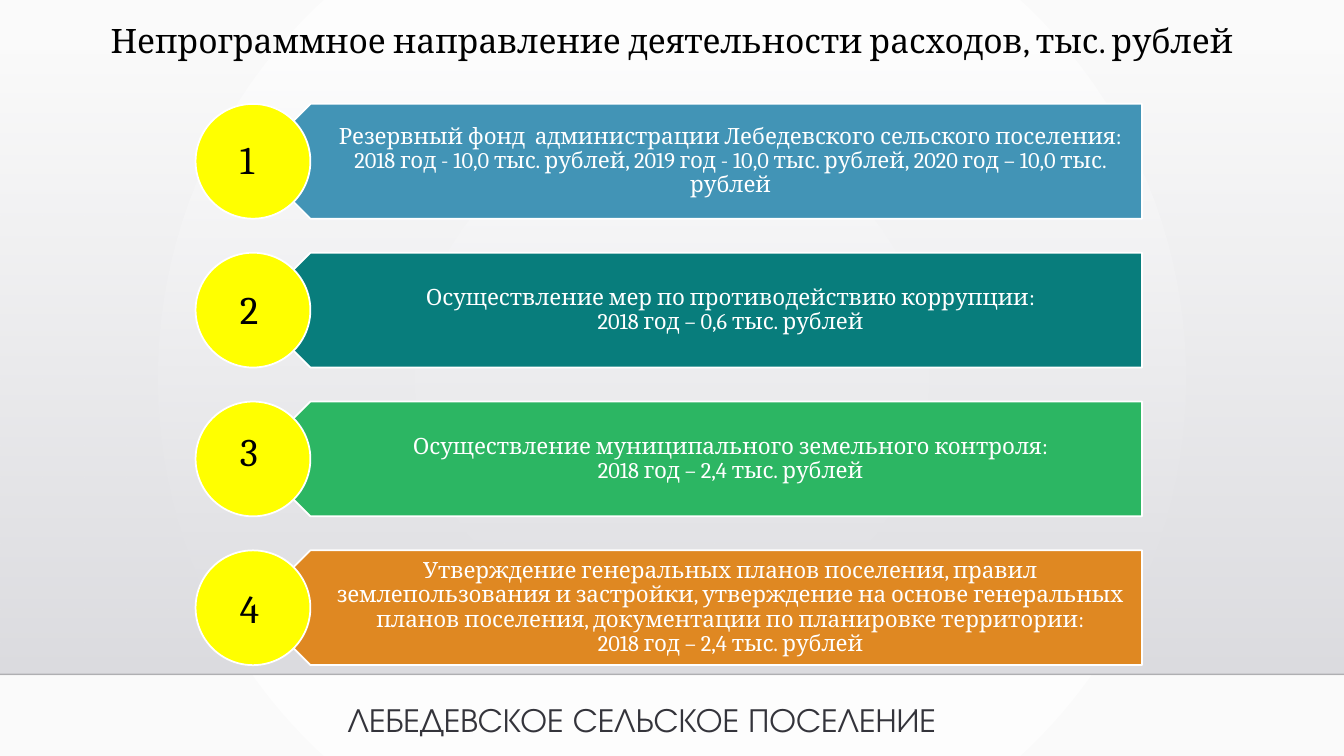
from lxml import etree
from pptx import Presentation
from pptx.dml.color import RGBColor
from pptx.enum.shapes import MSO_CONNECTOR, MSO_SHAPE
from pptx.enum.text import MSO_ANCHOR, MSO_AUTO_SIZE, PP_ALIGN
from pptx.oxml.ns import qn
from pptx.util import Pt

RECT, PLATE, OVAL = MSO_SHAPE.RECTANGLE, MSO_SHAPE.PENTAGON, MSO_SHAPE.OVAL
LINE = MSO_CONNECTOR.STRAIGHT
TOP, MIDDLE = MSO_ANCHOR.TOP, MSO_ANCHOR.MIDDLE
LEFT, CENTER = PP_ALIGN.LEFT, PP_ALIGN.CENTER
FIXED, GROW = MSO_AUTO_SIZE.NONE, MSO_AUTO_SIZE.SHAPE_TO_FIT_TEXT

WIDE, HIGH = 960, 540
FLOOR = 481.7
ROW_TOP, ROW_STEP, ROW_HIGH = 74.2, 106.3, 82
COLORS = {
    "white": "FFFFFF", "pale": "FAFAFA", "mist": "DCDCE0", "haze": "DEDEE2",
    "black": "000000", "rule": "000001", "ink": "34343B", "yellow": "FFFF00",
    "blue": "4294B6", "teal": "087D7C", "green": "2CB663", "orange": "DF8822",
}

# colour, top of the number, lines of text
ROWS = [
    ("blue", 92.9, ["Резервный фонд  администрации Лебедевского сельского поселения:",
                    "2018 год - 10,0 тыс. рублей, 2019 год - 10,0 тыс. рублей, "
                    "2020 год – 10,0 тыс. рублей"]),
    ("teal", 200.2, ["Осуществление мер по противодействию коррупции:",
                     "2018 год – 0,6 тыс. рублей"]),
    ("green", 301.7, ["Осуществление муниципального земельного контроля:",
                      "2018 год – 2,4 тыс. рублей"]),
    ("orange", 414, ["Утверждение генеральных планов поселения, правил землепользования "
                     "и застройки, утверждение на основе генеральных планов поселения, "
                     "документации по планировке территории:",
                     "2018 год – 2,4 тыс. рублей"]),
]


def rgb(name):
    return RGBColor.from_string(COLORS[name])


def fade(node, share):
    """Set the opacity, in percent, of the first RGB colour under node."""
    color = node.find(".//" + qn("a:srgbClr"))
    etree.SubElement(color, qn("a:alpha"), val=str(share * 1000))


def blend(fill, first, last):
    """Fill with a gradient that runs from top to bottom."""
    fill.gradient()
    fill.gradient_angle = 270
    for stop, name in zip(fill.gradient_stops, (first, last)):
        stop.color.rgb = rgb(name)


def write(frame, lines, size=16, font="Cambria", color="white", align=LEFT,
          space=None, anchor=TOP, wrap=True, fit=FIXED, inset=(7.2, 3.6, 7.2, 3.6)):
    frame.word_wrap, frame.auto_size, frame.vertical_anchor = wrap, fit, anchor
    (frame.margin_left, frame.margin_top,
     frame.margin_right, frame.margin_bottom) = map(Pt, inset)
    for i, line in enumerate(lines):
        para = frame.add_paragraph() if i else frame.paragraphs[0]
        para.alignment, para.line_spacing = align, space
        para.space_before = Pt(0)
        run = para.add_run()
        run.text = line
        run.font.size, run.font.name = Pt(size), font
        run.font.color.rgb = rgb(color)


class Board:
    """Draws the elements of one slide in a common style."""

    def __init__(self, slide):
        self.slide = slide
        self.shapes = slide.shapes

    def ground(self):
        """Give the slide a round gradient that spreads from its centre."""
        blend(self.slide.background.fill, "white", "pale")
        lin = self.slide.element.find(".//" + qn("a:lin"))
        ring = etree.Element(qn("a:path"), {"path": "circle"})
        etree.SubElement(ring, qn("a:fillToRect"), dict.fromkeys("ltrb", "50000"))
        lin.getparent().replace(lin, ring)

    def title(self, text, *box):
        title = self.shapes.title
        title.left, title.top, title.width, title.height = map(Pt, box)
        write(title.text_frame, [text], size=24, color="black", align=CENTER, space=0.9)

    def shape(self, kind, *box, fill=None, turn=0):
        shape = self.shapes.add_shape(kind, *map(Pt, box))
        shape.shadow.inherit = False
        shape.rotation = turn
        if fill:
            shape.fill.solid()
            shape.fill.fore_color.rgb = rgb(fill)
            shape.line.color.rgb = rgb("white")
            shape.line.width = Pt(1.25)
        else:
            shape.line.fill.background()
        return shape

    def veil(self, *box):
        """Add a panel that fades in towards its lower edge."""
        panel = self.shape(RECT, *box)
        blend(panel.fill, "mist", "haze")
        fade(panel.element.spPr, 0)

    def rule(self, *ends):
        line = self.shapes.add_connector(LINE, *map(Pt, ends))
        line.line.color.rgb = rgb("rule")
        line.line.width = Pt(1)
        props = line.element.spPr
        fade(props, 20)
        etree.SubElement(props, qn("a:effectLst"))

    def text(self, lines, *box, **style):
        write(self.shapes.add_textbox(*map(Pt, box)).text_frame, lines, **style)

    def row(self, top, fill, lines):
        self.shape(PLATE, 180.7, top, 635, ROW_HIGH, fill=fill, turn=180)
        self.text(lines, 201, top, 614.3, ROW_HIGH, align=CENTER, space=0.9,
                  anchor=MIDDLE, inset=(36, 5, 8.6, 5))
        self.shape(OVAL, 139.7, top, ROW_HIGH, ROW_HIGH, fill="yellow")


def main():
    deck = Presentation()
    deck.slide_width, deck.slide_height = Pt(WIDE), Pt(HIGH)
    board = Board(deck.slides.add_slide(deck.slide_layouts[5]))
    board.ground()
    board.veil(0, 36.7, WIDE, FLOOR - 36.7)
    board.rule(0, FLOOR, WIDE, FLOOR)
    board.title("Непрограммное направление деятельности расходов, тыс. рублей",
                0, 13.7, WIDE, 69)
    board.text(["ЛЕБЕДЕВСКОЕ СЕЛЬСКОЕ ПОСЕЛЕНИЕ"], 241.2, 496, 478, 36, size=24,
               font="TeX Gyre Adventor", color="ink", wrap=False, fit=GROW)
    for i, (fill, high, lines) in enumerate(ROWS):
        board.row(ROW_TOP + i * ROW_STEP, fill, lines)
        board.text([str(i + 1)], 164.2, high, 37.4, 41, size=28, color="black", fit=GROW)
    deck.save("out.pptx")


if __name__ == "__main__":
    main()
